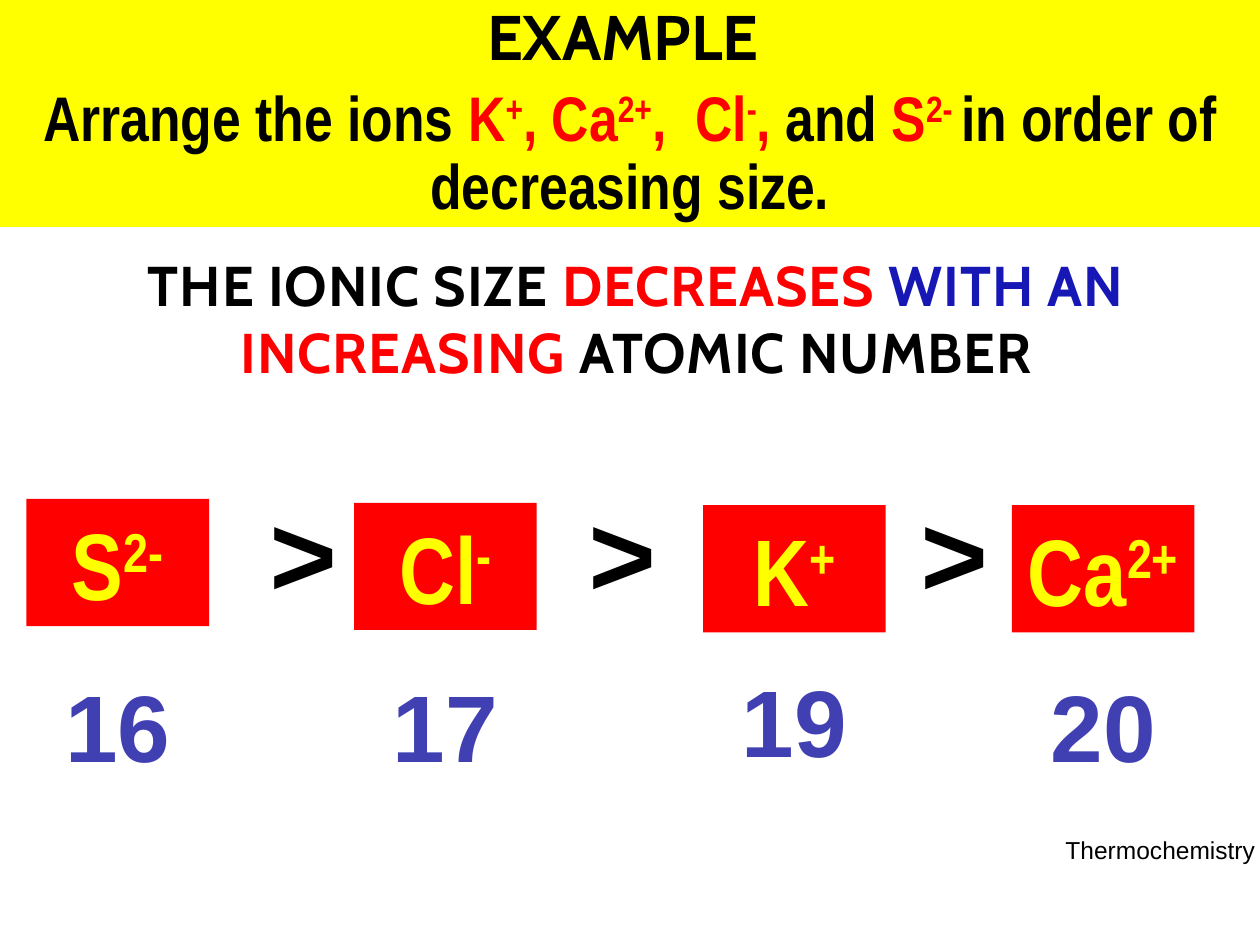
from pptx import Presentation
from pptx import util as u
from pptx.dml.color import RGBColor
from pptx.enum import shapes, text

BLACK = RGBColor(0x00, 0x00, 0x00)
RED = RGBColor(0xFF, 0x00, 0x00)
YELLOW = RGBColor(0xFF, 0xFF, 0x00)
BLUE = RGBColor(0x17, 0x17, 0xB5)
INDIGO = RGBColor(0x40, 0x40, 0xB3)

# The slide is a grid of 100 columns by 75 rows
COLUMNS, ROWS = 100, 75
SLIDE_WIDTH, SLIDE_HEIGHT = u.Inches(10), u.Inches(7.5)
SUPERSCRIPT = 30000  # baseline shift, thousandths of a percent


def place(box):
    """Turn (column, row, columns, rows) into slide lengths."""
    left, top, width, height = box
    column, row = SLIDE_WIDTH / COLUMNS, SLIDE_HEIGHT / ROWS
    return [u.Emu(round(n * size)) for n, size in
            ((left, column), (top, row), (width, column), (height, row))]


def add_run(paragraph, words, font, size, color, bold=True, raised=False, spacing=None):
    run = paragraph.add_run()
    run.text = words
    run.font.name, run.font.size, run.font.bold = font, u.Pt(size), bold
    run.font.color.rgb = color
    properties = run.font._element
    if raised:
        properties.set("baseline", str(SUPERSCRIPT))
    if spacing:
        properties.set("spc", str(round(spacing * 100)))


def add_label(slide, box, runs, font, size, wrap=False, bold=True, spacing=None):
    """Add a centred text box holding (words, color) runs."""
    shape = slide.shapes.add_textbox(*place(box))
    frame = shape.text_frame
    frame.word_wrap = wrap
    frame.auto_size = text.MSO_AUTO_SIZE.SHAPE_TO_FIT_TEXT
    if not wrap:
        # Single-line labels are centred and use the full box width
        frame.margin_left = frame.margin_right = 0
    paragraph = frame.paragraphs[0]
    paragraph.alignment = text.PP_ALIGN.CENTER
    for words, color in runs:
        add_run(paragraph, words, font, size, color, bold, spacing=spacing)
    return shape


def add_question(slide, box):
    title = slide.shapes.title
    title.left, title.top, title.width, title.height = place(box)
    title.fill.solid()
    title.fill.fore_color.rgb = YELLOW
    frame = title.text_frame
    frame.word_wrap = True
    frame.auto_size = text.MSO_AUTO_SIZE.NONE
    frame.vertical_anchor = text.MSO_ANCHOR.TOP
    heading, question = frame.paragraphs[0], frame.add_paragraph()
    for paragraph, space in ((heading, 0), (question, 7.2)):
        paragraph.alignment = text.PP_ALIGN.CENTER
        paragraph.line_spacing = 0.9
        paragraph.space_before = u.Pt(space)
    add_run(heading, "EXAMPLE ", "Cabin", 36, BLACK)
    for words, color, raised in (
        ("Arrange the ions ", BLACK, False),
        ("K", RED, False), ("+", RED, True),
        (", Ca", RED, False), ("2+", RED, True),
        (",  Cl", RED, False), ("-", RED, True),
        (", ", RED, False), ("and ", BLACK, False),
        ("S", RED, False), ("2- ", RED, True),
        ("in order of decreasing size.", BLACK, False),
    ):
        add_run(question, words, "Arial Narrow", 36, color, raised=raised)


def add_rule(slide, box):
    runs = (("THE IONIC SIZE ", BLACK), ("DECREASES", RED), (" WITH AN ", BLUE),
            ("INCREASING ", RED), ("ATOMIC NUMBER", BLACK))
    add_label(slide, box, runs, "Cabin", 32, wrap=True, spacing=0.5)


def add_ion(slide, box, symbol, charge, number, number_row):
    """Red tile with the ion, and its atomic number centred below."""
    left, _, width, height = box
    tile = slide.shapes.add_shape(shapes.MSO_SHAPE.RECTANGLE, *place(box))
    tile.shadow.inherit = False
    tile.fill.solid()
    tile.fill.fore_color.rgb = RED
    tile.line.fill.background()
    tile.text_frame.word_wrap = True
    paragraph = tile.text_frame.paragraphs[0]
    paragraph.alignment = text.PP_ALIGN.CENTER
    add_run(paragraph, symbol, "Arial Narrow", 54, YELLOW)
    add_run(paragraph, charge, "Arial Narrow", 54, YELLOW, raised=True)
    number_width = 10.4
    number_left = left + (width - number_width) / 2
    add_label(slide, (number_left, number_row, number_width, height),
              [(number, INDIGO)], "Arial", 54)


def add_ranking(slide, box):
    left, top, width, height = box
    for column, row, symbol, charge, number, number_row in (
        (0, 0, "S", "2-", "16", 52.5),
        (26, 0.3, "Cl", "-", "17", 52.5),
        (53.7, 0.5, "K", "+", "19", 52.1),
        (78.2, 0.5, "Ca", "2+", "20", 52.5),
    ):
        add_ion(slide, (left + column, top + row, width, height),
                symbol, charge, number, number_row)
    # Signs between the tiles, turned to read "greater than"
    for column in (18.3, 43.6, 70):
        sign = add_label(slide, (left + column, top - 0.7, 7.4, 12.1),
                         [("<", BLACK)], "Arial", 66)
        sign.rotation = 180


def add_footer(slide, box):
    add_label(slide, box, [("Thermochemistry", BLACK)], "Arial", 14, bold=False)


def main():
    presentation = Presentation()
    presentation.slide_width, presentation.slide_height = SLIDE_WIDTH, SLIDE_HEIGHT
    slide = presentation.slides.add_slide(presentation.slide_layouts[5])
    add_question(slide, (0, 0, COLUMNS, 18))
    add_rule(slide, (3.3, 19.4, 94.4, 11.8))
    add_ranking(slide, (2.1, 39.6, 14.5, 10.1))
    add_footer(slide, (83.6, 65.8, 17, 3.3))
    presentation.save("out.pptx")


if __name__ == "__main__":
    main()
